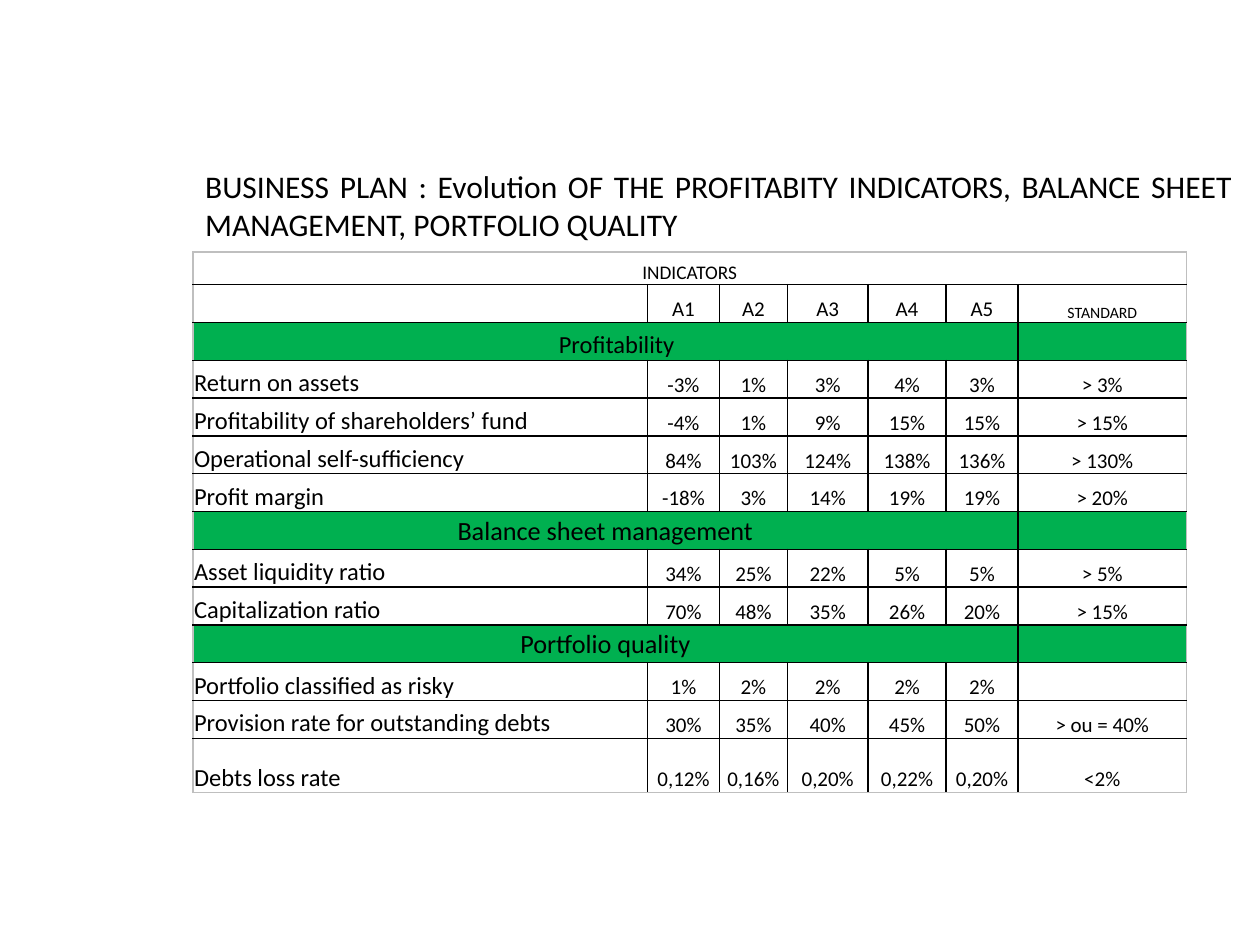
"""Build the business plan slide with its table of financial indicators."""
import pptx
import pptx.dml.color
import pptx.enum.text
import pptx.oxml.ns
import pptx.util
from lxml import etree

Inches, Pt = pptx.util.Inches, pptx.util.Pt
ALIGN = pptx.enum.text.PP_ALIGN
ANCHOR = pptx.enum.text.MSO_ANCHOR
BLACK, GREY, GREEN = "000000", "BFBFBF", "00B050"


def rgb(value):
    return pptx.dml.color.RGBColor.from_string(value)


def write(paragraph, text, size, alignment):
    paragraph.alignment = alignment
    if not text:
        paragraph._p.get_or_add_endParaRPr().set("sz", str(size * 100))
        return
    run = paragraph.add_run()
    run.text = text
    for attribute, value in {"name": "Calibri", "size": Pt(size)}.items():
        setattr(run.font, attribute, value)
    run.font.color.rgb = rgb(BLACK)


indicators = [
    ["INDICATORS"],
    ["", "A1", "A2", "A3", "A4", "A5", "STANDARD"],
    ["Profitability"],
    ["Return on assets", "-3%", "1%", "3%", "4%", "3%", "> 3%"],
    ["Profitability of shareholders’ fund", "-4%", "1%", "9%", "15%", "15%", "> 15%"],
    ["Operational self-sufficiency", "84%", "103%", "124%", "138%", "136%", "> 130%"],
    ["Profit margin", "-18%", "3%", "14%", "19%", "19%", "> 20%"],
    ["Balance sheet management"],
    ["Asset liquidity ratio", "34%", "25%", "22%", "5%", "5%", "> 5%"],
    ["Capitalization ratio", "70%", "48%", "35%", "26%", "20%", "> 15%"],
    ["Portfolio quality"],
    ["Portfolio classified as risky", "1%", "2%", "2%", "2%", "2%", ""],
    ["Provision rate for outstanding debts", "30%", "35%", "40%", "45%", "50%", "> ou = 40%"],
    ["Debts loss rate", "0,12%", "0,16%", "0,20%", "0,22%", "0,20%", "<2%"],
]
column_widths = [3.61, 0.57, 0.54, 0.64, 0.62, 0.57, 1.34]
row_heights = [0.26] + [0.3] * 12 + [0.43]
special_sizes = {"INDICATORS": 11, "STANDARD": 9, "Profitability": 14}
cell_format = {
    "margin_left": Inches(0.01),
    "margin_right": Inches(0.01),
    "margin_top": Inches(0.01),
    "margin_bottom": 0,
    "vertical_anchor": ANCHOR.BOTTOM,
}

presentation = pptx.Presentation()
presentation.slide_width, presentation.slide_height = Inches(10), Inches(7.5)
slide = presentation.slides.add_slide(presentation.slide_layouts[6])

heading = slide.shapes.add_textbox(Inches(1.53), Inches(1.25), Inches(8.35), Inches(0.75)).text_frame
heading.word_wrap = True
heading.vertical_anchor = ANCHOR.MIDDLE
write(
    heading.paragraphs[0],
    "BUSINESS PLAN : Evolution OF THE PROFITABITY INDICATORS, "
    "BALANCE SHEET MANAGEMENT, PORTFOLIO QUALITY",
    18,
    ALIGN.JUSTIFY,
)

row_count, column_count = len(indicators), len(column_widths)
table = slide.shapes.add_table(
    row_count, column_count, Inches(1.53), Inches(2),
    Inches(sum(column_widths)), Inches(sum(row_heights)),
).table
table.first_row = table.horz_banding = False
for column, width in zip(table.columns, column_widths):
    column.width = Inches(width)
for row, height in zip(table.rows, row_heights):
    row.height = Inches(height)

for row_index, entries in enumerate(indicators):
    is_band = len(entries) == 1
    is_section = is_band and row_index > 0
    last_merged = 0
    if is_band:
        last_merged = column_count - 2 if is_section else column_count - 1
        table.cell(row_index, 0).merge(table.cell(row_index, last_merged))
    texts = entries + [""] * (column_count - len(entries))
    for column_index, text in enumerate(texts):
        cell = table.cell(row_index, column_index)
        for attribute, value in cell_format.items():
            setattr(cell, attribute, value)
        if is_section and text != "Profitability":
            cell.vertical_anchor = ANCHOR.MIDDLE
        if text == "Profitability":
            cell.margin_left = Inches(0.19)

        is_label = column_index == 0 and not is_band
        usual_size = 14 if is_label else 15 if is_section else 12
        size = special_sizes.get(text, usual_size) if text else 11
        write(cell.text_frame.paragraphs[0], text, size, ALIGN.LEFT if is_label else ALIGN.CENTER)

        right_column = last_merged if column_index == 0 else column_index
        outer_sides = {
            "lnL": column_index == 0,
            "lnR": right_column == column_count - 1,
            "lnT": row_index == 0,
            "lnB": row_index == row_count - 1,
        }
        properties = cell._tc.get_or_add_tcPr()
        for side, is_outer in outer_sides.items():
            border = etree.SubElement(properties, pptx.oxml.ns.qn(f"a:{side}"), w=str(Pt(1)))
            solid = etree.SubElement(border, pptx.oxml.ns.qn("a:solidFill"))
            etree.SubElement(solid, pptx.oxml.ns.qn("a:srgbClr"), val=GREY if is_outer else BLACK)
        if is_section:
            cell.fill.solid()
            cell.fill.fore_color.rgb = rgb(GREEN)
        else:
            cell.fill.background()

presentation.save("out.pptx")
